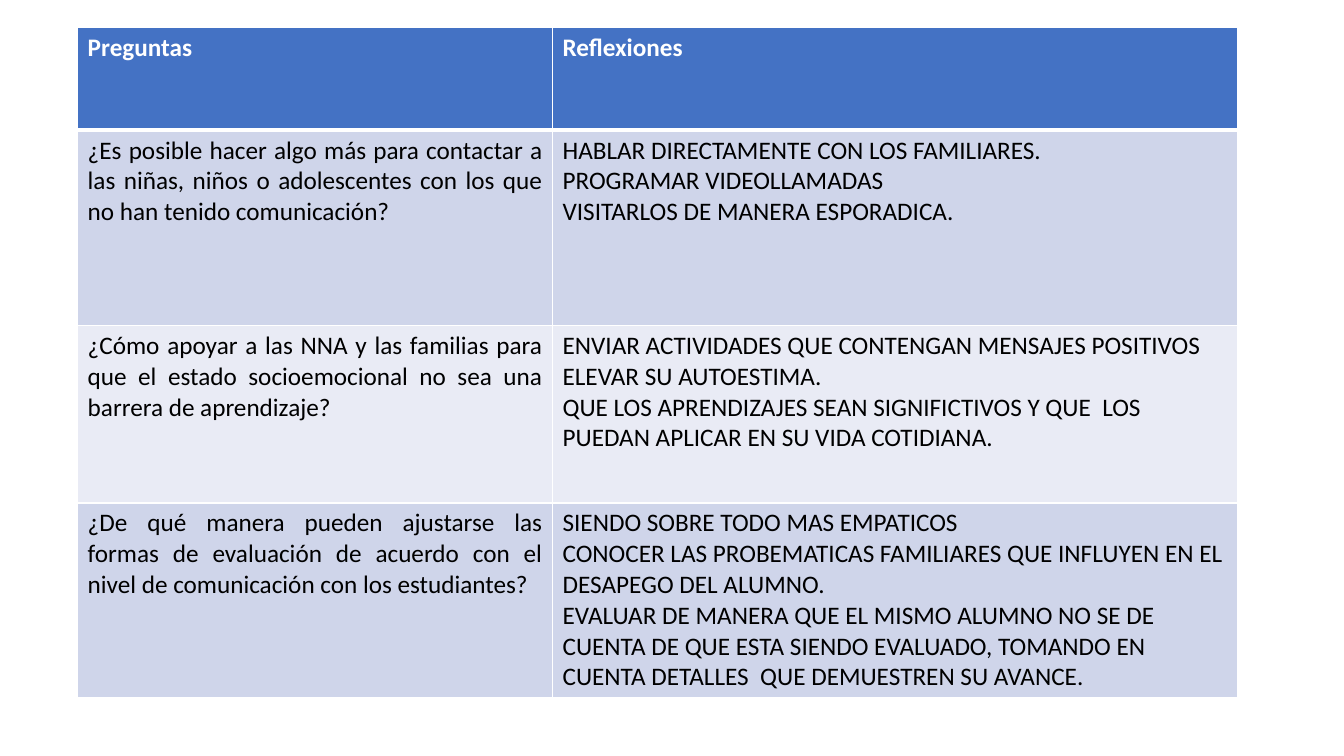
from lxml import etree
from pptx import Presentation
from pptx import util as u
from pptx.dml.color import RGBColor
from pptx.enum import text
from pptx.oxml.ns import qn

WHITE, BLACK, BLUE = "FFFFFF", "000000", "4472C4"
BANDS = ["CFD5EA", "E9EBF5"]
COLUMN_WIDTHS = [4.71, 6.79]
ROW_HEIGHTS = [1.02, 1.94, 1.76, 1.68]

HEADINGS = ["Preguntas", "Reflexiones"]
QUESTIONS = [
    ("¿Es posible hacer algo más para contactar a las niñas, niños o adolescentes "
     "con los que no han tenido comunicación?",
     ["HABLAR DIRECTAMENTE CON LOS FAMILIARES.",
      "PROGRAMAR VIDEOLLAMADAS",
      "VISITARLOS DE MANERA ESPORADICA."]),
    ("¿Cómo apoyar a las NNA y las familias para que el estado socioemocional "
     "no sea una barrera de aprendizaje?",
     ["ENVIAR ACTIVIDADES QUE CONTENGAN MENSAJES POSITIVOS",
      "ELEVAR SU AUTOESTIMA.",
      "QUE LOS APRENDIZAJES SEAN SIGNIFICTIVOS Y QUE  LOS PUEDAN APLICAR EN SU "
      "VIDA COTIDIANA."]),
    ("¿De qué manera pueden ajustarse las formas de evaluación de acuerdo con el "
     "nivel de comunicación con los estudiantes? ",
     ["SIENDO SOBRE TODO MAS EMPATICOS",
      "CONOCER LAS PROBEMATICAS FAMILIARES QUE INFLUYEN EN EL DESAPEGO DEL ALUMNO.",
      "EVALUAR DE MANERA QUE EL MISMO ALUMNO NO SE DE CUENTA DE QUE ESTA SIENDO "
      "EVALUADO, TOMANDO EN CUENTA DETALLES  QUE DEMUESTREN SU AVANCE."]),
]


def color(value):
    return RGBColor.from_string(value)


def set_borders(cell, top=1, bottom=1):
    """Draw white lines, widths in points, on the four sides of a cell."""
    properties = cell._tc.get_or_add_tcPr()
    widths = {"a:lnL": 1, "a:lnR": 1, "a:lnT": top, "a:lnB": bottom}
    for index, (tag, width) in enumerate(widths.items()):
        line = etree.Element(qn(tag), w=str(u.Pt(width)))
        fill = etree.SubElement(line, qn("a:solidFill"))
        etree.SubElement(fill, qn("a:srgbClr"), val=WHITE)
        properties.insert(index, line)


def fill_cell(cell, lines, fill, ink=BLACK, bold=False, align=text.PP_ALIGN.LEFT):
    cell.fill.solid()
    cell.fill.fore_color.rgb = color(fill)
    cell.text = "\n".join(lines)
    for para in cell.text_frame.paragraphs:
        para.alignment = align
        para.font.name = "Calibri"
        para.font.size = u.Pt(18)
        para.font.bold = bold
        para.font.color.rgb = color(ink)


def add_grid(page):
    frame = page.shapes.add_table(
        len(ROW_HEIGHTS), len(COLUMN_WIDTHS), u.Inches(0.77), u.Inches(0.27),
        u.Inches(sum(COLUMN_WIDTHS)), u.Inches(sum(ROW_HEIGHTS)))
    table = frame.table
    for column, width in zip(table.columns, COLUMN_WIDTHS):
        column.width = u.Inches(width)
    for row, height in zip(table.rows, ROW_HEIGHTS):
        row.height = u.Inches(height)
    return table


def main():
    deck = Presentation()
    deck.slide_width, deck.slide_height = u.Inches(13.33), u.Inches(7.5)
    page = deck.slides.add_slide(deck.slide_layouts[6])
    table = add_grid(page)

    # Header row, with a thicker line beneath
    for column, heading in enumerate(HEADINGS):
        cell = table.cell(0, column)
        fill_cell(cell, [heading], BLUE, WHITE, bold=True)
        set_borders(cell, bottom=3)

    # Questions and reflections in alternating bands
    for row, (question, reflections) in enumerate(QUESTIONS, start=1):
        band = BANDS[(row - 1) % 2]
        left, right = table.cell(row, 0), table.cell(row, 1)
        fill_cell(left, [question], band, align=text.PP_ALIGN.JUSTIFY)
        fill_cell(right, reflections, band)
        for cell in (left, right):
            set_borders(cell, top=3 if row == 1 else 1)

    deck.save("out.pptx")


if __name__ == "__main__":
    main()
